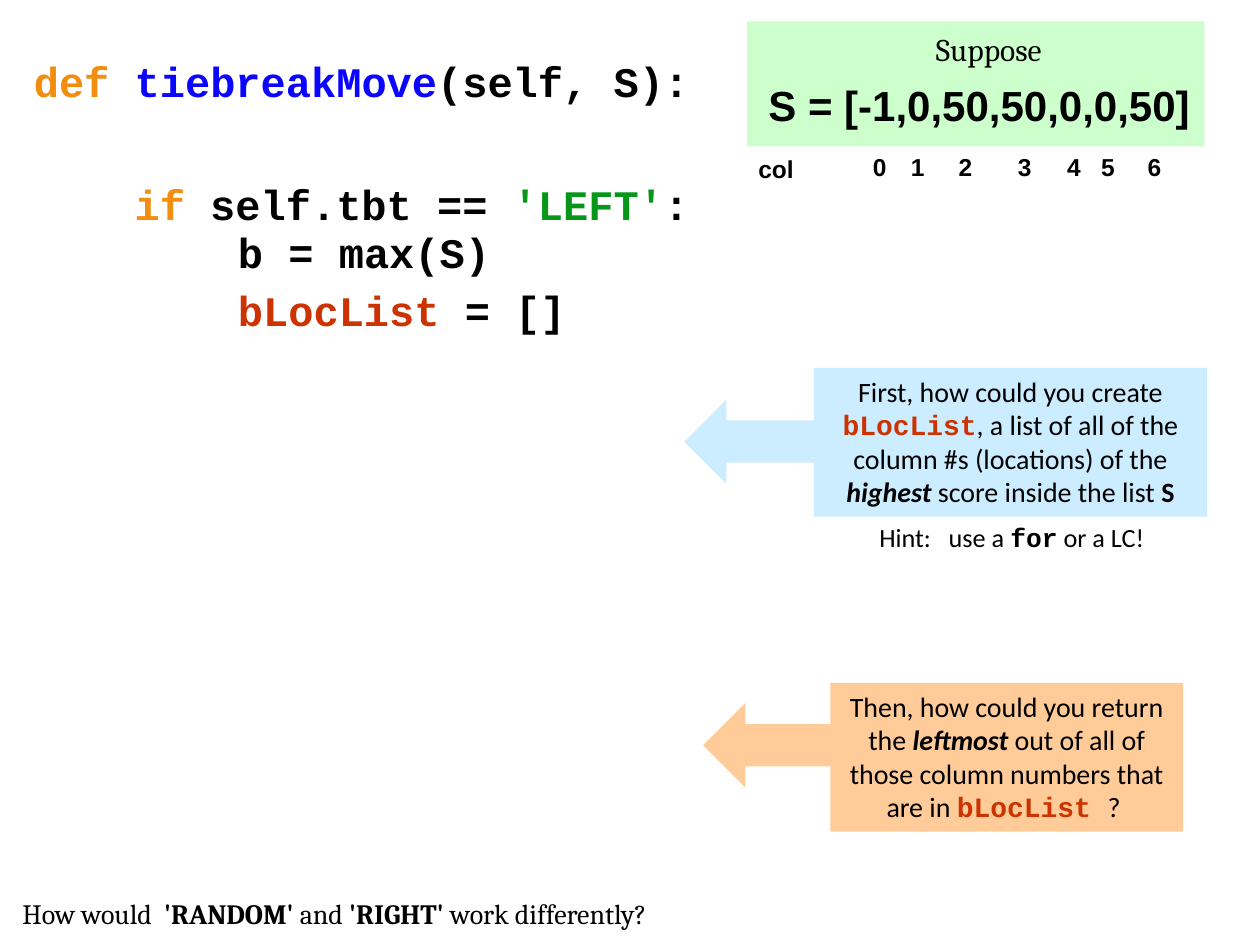
from pptx import Presentation
from pptx.dml.color import RGBColor
from pptx.enum.shapes import MSO_SHAPE as Shape
from pptx.enum.text import MSO_ANCHOR as Anchor, MSO_AUTO_SIZE as AutoSize, PP_ALIGN as Align
from pptx.util import Inches, Pt

BLACK = RGBColor(0x00, 0x00, 0x00)
ORANGE = RGBColor(0xF3, 0x8D, 0x0F)
BLUE = RGBColor(0x0B, 0x04, 0xFF)
GREEN = RGBColor(0x06, 0x96, 0x1A)
RED = RGBColor(0xCC, 0x33, 0x00)
PALE_GREEN = RGBColor(0xCC, 0xFF, 0xCC)
PALE_BLUE = RGBColor(0xCC, 0xEC, 0xFF)
PEACH = RGBColor(0xFF, 0xCC, 0x99)
CODE = "Courier New"

presentation = Presentation()
presentation.slide_width, presentation.slide_height = Inches(10), Inches(7.5)
slide = presentation.slides.add_slide(presentation.slide_layouts[6])

# The slide is a grid of 100 columns by 75 rows
COLUMN = presentation.slide_width / 100
ROW = presentation.slide_height / 75


def add_box(left, top, width, height, fill=None, kind=Shape.RECTANGLE):
    """Add a filled shape, or a text box when no fill is given."""
    area = [round(n * unit) for n, unit in
            zip((left, top, width, height), (COLUMN, ROW, COLUMN, ROW))]
    if fill is None:
        return slide.shapes.add_textbox(*area)
    shape = slide.shapes.add_shape(kind, *area)
    shape.fill.solid()
    shape.fill.fore_color.rgb = fill
    shape.line.fill.background()
    shape.shadow.inherit = False
    return shape


def add_text(shape, *pieces, size, font, color=BLACK, bold=False, align=Align.LEFT,
             wrap=True, new=False):
    """Write one paragraph; a piece is text, or text with its own format."""
    frame = shape.text_frame
    frame.word_wrap = wrap
    frame.auto_size = AutoSize.SHAPE_TO_FIT_TEXT
    frame.vertical_anchor = Anchor.TOP
    paragraph = frame.add_paragraph() if new else frame.paragraphs[0]
    paragraph.alignment = align
    for piece in pieces:
        text, own = (piece, {}) if isinstance(piece, str) else piece
        run = paragraph.add_run()
        run.text = text
        run.font.size = Pt(size)
        run.font.name = own.get("font", font)
        run.font.bold = own.get("bold", bold)
        run.font.italic = own.get("italic", False)
        run.font.color.rgb = own.get("color", color)
    return paragraph


code = dict(size=24, font=CODE, bold=True)
note = dict(size=16, font="Calibri", align=Align.CENTER)
label = dict(size=14, font="Arial", bold=True, wrap=False)
strong = dict(bold=True)
emphasis = dict(bold=True, italic=True)
list_name = dict(font=CODE, bold=True, color=RED)

# Code
method = add_box(1.7, 4.7, 79.2, 13.9)
definition = add_text(method, ("def ", dict(color=ORANGE)),
                      ("tiebreakMove", dict(color=BLUE)), "(self, S):", **code)
condition = add_text(method, ("if ", dict(color=ORANGE)), "self.tbt == ",
                     ("'LEFT'", dict(color=GREEN)), ":", new=True, **code)
definition.line_spacing = condition.line_spacing = 0.8
condition.space_before = Pt(47)
condition._p.get_or_add_pPr().set("marL", str(round(8 * COLUMN)))
add_text(add_box(17.9, 17.5, 22.9, 5), "b = max(S)", **code)
add_text(add_box(17.9, 22.1, 28.7, 5), ("bLocList ", dict(color=RED)), "= []", **code)

# Example list with its column numbers
add_box(59.3, 1.7, 36.3, 9.9, PALE_GREEN)
add_text(add_box(73.3, 1.9, 11.1, 4), "Suppose", size=18, font="Cambria", wrap=False)
add_text(add_box(60, 5.8, 35.8, 5.1), "S = [-1,0,50,50,0,0,50]",
         size=24, font="Arial", bold=True, wrap=False)
add_text(add_box(59.2, 11.7, 4.8, 3.4), "col", **label)
for number, left in enumerate((68.3, 71.3, 75.1, 79.8, 83.7, 86.4, 90.1)):
    add_text(add_box(left, 11.6, 3.1, 3.4), str(number), **label)

# Questions, each with an arrow towards the code
first = add_box(64.6, 29.2, 31.2, 11.8, PALE_BLUE)
add_text(first, "First, how could you create ", ("bLocList", list_name),
         ", a list of all of the column #s (locations) of the ",
         ("highest ", emphasis), "score inside the list ", ("S", strong), **note)
then = add_box(65.9, 54.2, 28, 11.8, PEACH)
add_text(then, "Then, how could you return the ", ("leftmost ", emphasis),
         "out of all of those column numbers that are in ",
         ("bLocList ", list_name), "? ", **note)
for left, top, fill in ((54.3, 31.7, PALE_BLUE), (55.8, 55.8, PEACH)):
    add_box(left, top, 10.9, 6.7, fill, Shape.LEFT_ARROW)

add_text(add_box(68.8, 40.9, 23.2, 3.5), "Hint:   use a ",
         ("for", dict(font=CODE, bold=True)), " or a LC!",
         size=15, font="Calibri", wrap=False)
add_text(add_box(0.8, 70.7, 75.8, 3.7), "How would  ", ("'RANDOM'", strong), " and ",
         ("'RIGHT' ", strong), "work differently?", size=16, font="Cambria")

presentation.save("out.pptx")
